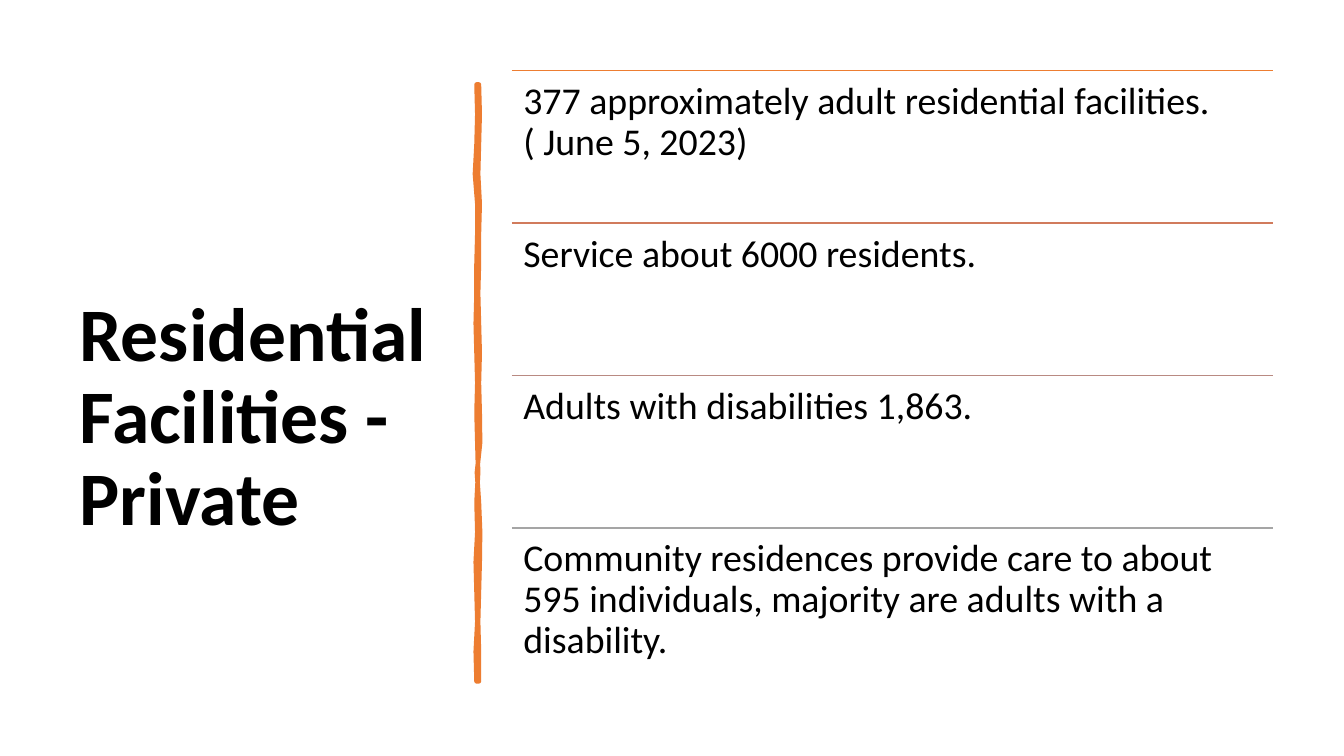
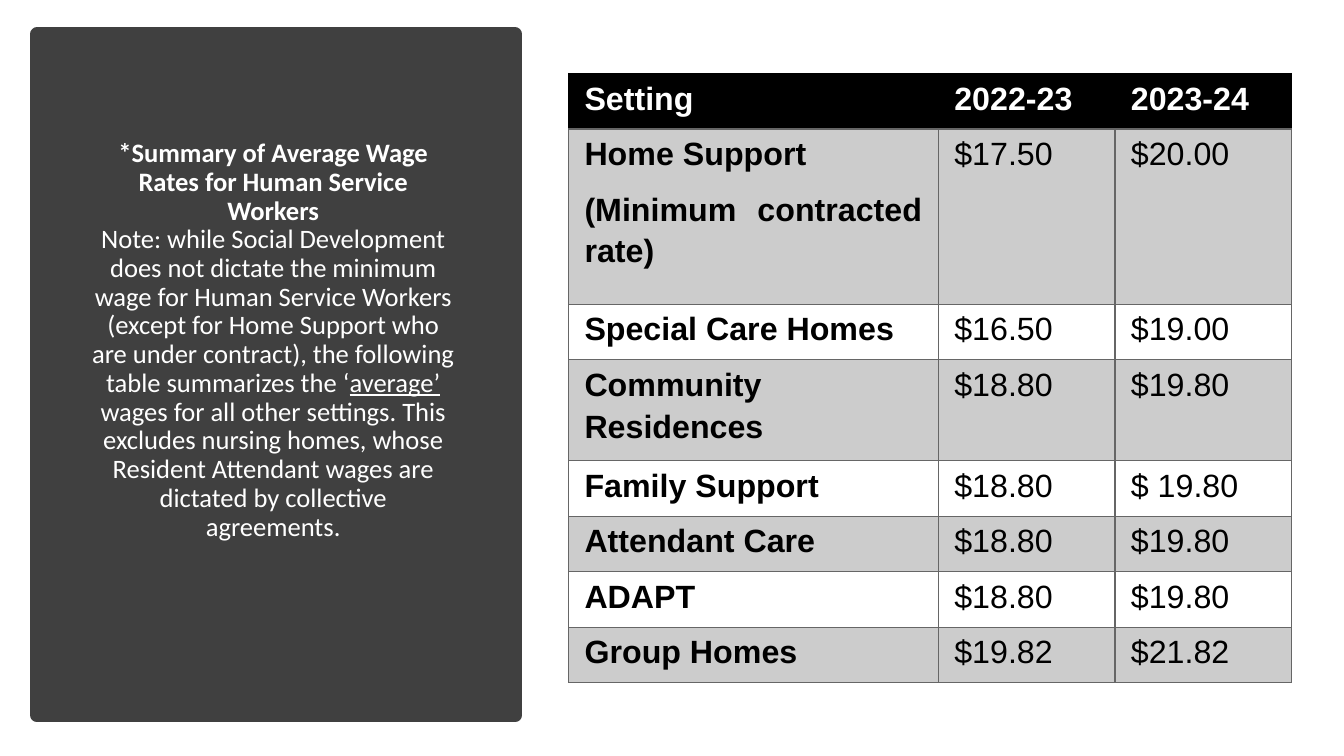
from lxml import etree
from pptx import Presentation
from pptx.dml.color import RGBColor
from pptx.enum.shapes import MSO_CONNECTOR, MSO_SHAPE
from pptx.enum.text import MSO_ANCHOR, MSO_AUTO_SIZE, PP_ALIGN
from pptx.oxml.ns import qn
from pptx.util import Cm, Pt

LINE, RECT = MSO_CONNECTOR.STRAIGHT, MSO_SHAPE.RECTANGLE
TOP, MID = MSO_ANCHOR.TOP, MSO_ANCHOR.MIDDLE
LEFT, CENTER, FULL = PP_ALIGN.LEFT, PP_ALIGN.CENTER, PP_ALIGN.JUSTIFY
FIXED = MSO_AUTO_SIZE.NONE

BLACK, WHITE = "000000", "FFFFFF"
ORANGE, DARK, BAND, GRID = "ED7D31", "404040", "CCCCCC", "666666"
SANS, ARIAL = "Calibri", "Arial"


def rgb(code):
    return RGBColor.from_string(code)


class Deck:
    """Holds the shared style and the current slide."""

    def __init__(self):
        self.prs = Presentation()
        self.prs.slide_width, self.prs.slide_height = Cm(33.87), Cm(19.05)

    def new(self):
        self.slide = self.prs.slides.add_slide(self.prs.slide_layouts[5])
        self.shapes = self.slide.shapes

    # Text
    def style(self, par, size, color=BLACK, bold=False, font=SANS,
              align=LEFT, space=0.9, after=0):
        par.alignment, par.line_spacing = align, space
        par.space_before, par.space_after = Pt(0), Pt(after)
        for run in par.runs:
            face = run.font
            face.name, face.size, face.bold = font, Pt(size), bold
            face.color.rgb = rgb(color)

    def title(self, text, box, size, **look):
        shape = self.shapes.title
        shape.left, shape.top, shape.width, shape.height = map(Cm, box)
        frame = shape.text_frame
        frame.text = text
        frame.word_wrap, frame.auto_size = True, FIXED
        frame.vertical_anchor = MID
        for par in frame.paragraphs:
            self.style(par, size, **look)
        return frame

    def note(self, text, box, size):
        frame = self.shapes.add_textbox(*map(Cm, box)).text_frame
        frame.word_wrap, frame.vertical_anchor = True, TOP
        frame.margin_left = frame.margin_right = Cm(0.29)
        frame.margin_top = frame.margin_bottom = Cm(0.29)
        frame.text = text
        self.style(frame.paragraphs[0], size)

    # Shapes
    def paint(self, shape, color, width):
        shape.shadow.inherit = False
        shape.fill.solid()
        shape.fill.fore_color.rgb = rgb(color)
        shape.line.color.rgb = rgb(color)
        shape.line.width = Pt(width)

    def panel(self, box, color, width):
        shape = self.shapes.add_shape(RECT, *map(Cm, box))
        self.paint(shape, color, width)
        self.shapes.title._element.addprevious(shape._element)

    def rule(self, left, top, width, color):
        line = self.shapes.add_connector(
            LINE, Cm(left), Cm(top), Cm(left + width), Cm(top))
        line.line.color.rgb = rgb(color)
        line.line.width = Pt(1)
        etree.SubElement(line._element.spPr, qn("a:effectLst"))

    def stroke(self, left, top, width, height, waves, color):
        """Draw an upright bar whose two sides waver on their own."""
        west, east = waves
        step = height / (len(west) - 1)
        down = [(left + width + dx, top + i * step) for i, dx in enumerate(east)]
        up = [(left + dx, top + i * step) for i, dx in enumerate(west)]
        spots = [(Cm(x), Cm(y)) for x, y in down + up[::-1]]
        pen = self.shapes.build_freeform(*spots[0])
        pen.add_line_segments(spots[1:], close=True)
        self.paint(pen.convert_to_shape(), color, 3.25)

    # Table
    def edge(self, cell, color):
        props = cell._tc.get_or_add_tcPr()
        for i, side in enumerate(("lnL", "lnR", "lnT", "lnB")):
            line = etree.Element(qn("a:" + side), w=str(Pt(1)))
            fill = etree.SubElement(line, qn("a:solidFill"))
            etree.SubElement(fill, qn("a:srgbClr"), val=color)
            props.insert(i, line)

    def table(self, rows, left, top, widths, heights):
        frame = self.shapes.add_table(
            len(rows), len(widths), Cm(left), Cm(top),
            Cm(sum(widths)), Cm(sum(heights)))
        grid = frame.table
        grid.horz_banding = False
        for col, width in zip(grid.columns, widths):
            col.width = Cm(width)
        for r, (texts, height) in enumerate(zip(rows, heights)):
            grid.rows[r].height = Cm(height)
            back = BLACK if r == 0 else BAND if r % 2 else WHITE
            for c, text in enumerate(texts):
                cell = grid.cell(r, c)
                cell.margin_left = cell.margin_right = Cm(0.4)
                cell.margin_top, cell.margin_bottom = Cm(0.05), Cm(0)
                cell.vertical_anchor = TOP
                cell.fill.solid()
                cell.fill.fore_color.rgb = rgb(back)
                self.edge(cell, GRID if r else BLACK)
                cell.text_frame.text = text
                for par in cell.text_frame.paragraphs:
                    self.style(par, 23, BLACK if r else WHITE,
                               r == 0 or c == 0, ARIAL, FULL, 1.15, 10)


def homes(deck):
    deck.new()
    deck.title("Residential Facilities - Private",
               (1.75, 2.8, 9.5, 15.52), 54, bold=True)

    # Hand-drawn divider
    west = (0, 0.02, 0, -0.04, 0.02, 0.02, 0, 0, -0.02, 0, 0.02,
            0, 0.02, 0.04, 0, 0.02, -0.02, 0, 0.02, -0.02, 0)
    east = (0, 0.02, 0, -0.02, 0.02, 0, 0, -0.02, 0, 0.02, 0,
            0.02, 0.03, -0.05, 0, 0.03, 0.02, 0, -0.02, 0, 0)
    deck.stroke(12.01, 2.13, 0.06, 15.04, (west, east), ORANGE)

    # Facts under rules
    facts = (
        ("377 approximately adult residential facilities.( June 5, 2023)", ORANGE),
        ("Service about 6000 residents.", "D17B5C"),
        ("Adults with disabilities 1,863.", "B98A82"),
        ("Community residences provide care to about 595 individuals, "
         "majority are adults with a disability.", "A5A5A5"),
    )
    left, width, step = 12.9, 19.18, 3.84
    for i, (text, color) in enumerate(facts):
        top = 1.78 + i * step
        deck.rule(left, top, width, color)
        deck.note(text, (left, top, width, step), 27)


def wages(deck):
    deck.new()
    deck.panel((0.94, 0.86, 12.04, 17.17), DARK, 10)

    # Heading and note
    head = "*Summary of Average Wage Rates for Human Service Workers"
    parts = (
        "Note: while Social Development does not dictate the minimum wage "
        "for Human Service Workers (except for Home Support who are under "
        "contract), the following table summarizes the ‘",
        "average’",
        " wages for all other settings. This excludes nursing homes, whose "
        "Resident Attendant wages are dictated by collective agreements.",
    )
    look = {"color": WHITE, "align": CENTER}
    frame = deck.title(head, (2.06, 1.69, 9.65, 13.79), 19, bold=True, **look)
    par = frame.add_paragraph()
    for part in parts:
        par.add_run().text = part
    deck.style(par, 19, **look)
    par.runs[1].font.underline = True

    # Wage table
    rows = (
        ("Setting", "2022-23", "2023-24"),
        ("Home Support\n(Minimum contracted rate)", "$17.50", "$20.00"),
        ("Special Care Homes", "$16.50", "$19.00"),
        ("Community Residences", "$18.80", "$19.80"),
        ("Family Support", "$18.80", "$ 19.80"),
        ("Attendant Care", "$18.80", "$19.80"),
        ("ADAPT", "$18.80", "$19.80"),
        ("Group Homes", "$19.82", "$21.82"),
    )
    one = 1.4
    deck.table(rows, 14.33, 1.85, (9.32, 4.45, 4.45),
               (one, 4.42, one, 2.54, one, one, one, one))


def main():
    deck = Deck()
    homes(deck)
    wages(deck)
    deck.prs.save("out.pptx")


if __name__ == "__main__":
    main()
